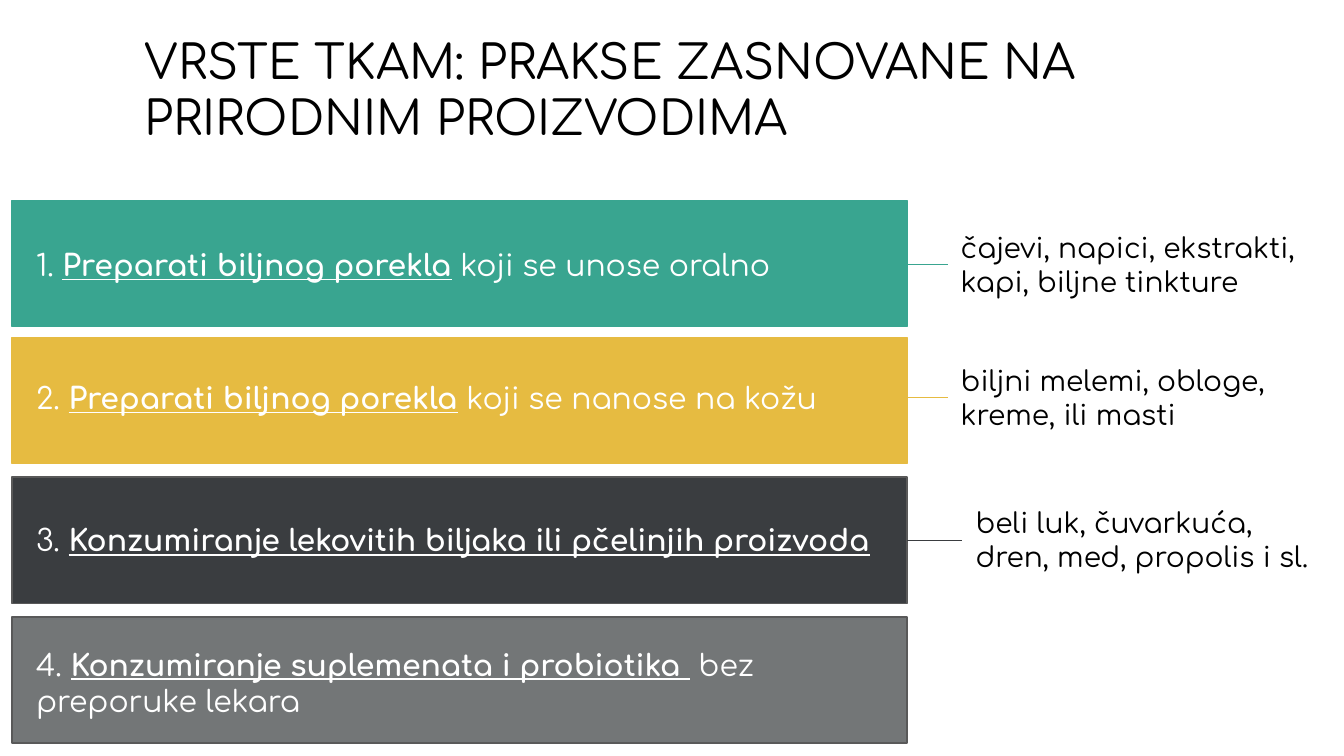
from lxml import etree
from pptx import Presentation, util as u
from pptx.dml.color import RGBColor
from pptx.enum import shapes as sh, text as tx
from pptx.oxml.ns import qn

WIDE = 10
HIGH = WIDE * 9 / 16
LEFT, BAR_W, BAR_H = 0.09, 6.66, 0.94
EDGE = LEFT + BAR_W
TEXT_X = 0.17

ROWS = [
    dict(top=1.49, fill="39A590", line="39A590", mid=1.97, label_h=0.47,
         lead="1. ", key="Preparati biljnog porekla", rest=" koji se unose oralno",
         note="čajevi, napici, ekstrakti, kapi, biljne tinkture", note_x=7.05),
    dict(top=2.51, fill="E6BB41", line="E6BB41", mid=2.96, label_h=0.47,
         lead="2. ", key="Preparati biljnog porekla", rest=" koji se nanose na kožu",
         note="biljni melemi, obloge, kreme, ili masti", note_x=7.05),
    dict(top=3.55, fill="3A3D40", line="595959", mid=4.02, label_h=0.47,
         lead="3. ", key="Konzumiranje lekovitih biljaka ili pčelinjih proizvoda", rest="",
         note="beli luk, čuvarkuća, dren, med, propolis i sl.", note_x=7.16),
    dict(top=4.59, fill="737677", line="595959", mid=5.08, label_h=0.74,
         lead="4. ", key="Konzumiranje suplemenata i probiotika ", rest=" bez preporuke lekara",
         note="", note_x=0),
]


def tint(code):
    """Turn a hex string into a colour."""
    return RGBColor.from_string(code)


def add_text(slide, runs, box, size, color="000000"):
    """Add a wrapped text box whose runs are (wording, is_key) pairs."""
    shape = slide.shapes.add_textbox(*map(u.Inches, box))
    frame = shape.text_frame
    frame.word_wrap = True
    frame.vertical_anchor = tx.MSO_ANCHOR.TOP
    for side in ("left", "right", "top", "bottom"):
        setattr(frame, f"margin_{side}", u.Inches(0.1))
    for words, key in runs:
        run = frame.paragraphs[0].add_run()
        run.text = words
        font = run.font
        font.name, font.size = "Comfortaa", u.Pt(size)
        font.bold = font.underline = key
        font.color.rgb = tint(color)
    return shape


def add_bar(slide, row):
    """Add the coloured bar of one row."""
    box = LEFT, row["top"], BAR_W, BAR_H
    bar = slide.shapes.add_shape(sh.MSO_SHAPE.RECTANGLE, *map(u.Inches, box))
    bar.shadow.inherit = False
    bar.fill.solid()
    bar.fill.fore_color.rgb = tint(row["fill"])
    bar.line.color.rgb = tint(row["line"])
    bar.line.width = u.Pt(0.75)


def add_link(slide, start, end, color):
    """Join the right side of one box to the left side of another."""
    link = slide.shapes.add_connector(sh.MSO_CONNECTOR.STRAIGHT, 0, 0, 0, 0)
    link.begin_connect(start, 3)
    link.end_connect(end, 1)
    link.line.color.rgb = tint(color)
    link.line.width = u.Pt(0.75)
    etree.SubElement(link._element.spPr, qn("a:effectLst"))


def add_row(slide, row):
    """Add a bar with its label, and its note when there is one."""
    add_bar(slide, row)
    parts = [(row["lead"], False), (row["key"], True), (row["rest"], False)]
    high = row["label_h"]
    label = add_text(slide, [part for part in parts if part[0]],
                     (TEXT_X, row["mid"] - high / 2, EDGE - TEXT_X, high), 16, "FFFFFF")
    if row["note"]:
        note = add_text(slide, [(row["note"], False)],
                        (row["note_x"], row["mid"] - 0.71 / 2, 2.75, 0.71), 15)
        add_link(slide, label, note, row["fill"])


def main():
    """Build the slide and save it."""
    deck = Presentation()
    deck.slide_width, deck.slide_height = u.Inches(WIDE), u.Inches(HIGH)
    slide = deck.slides.add_slide(deck.slide_layouts[6])
    add_text(slide, [("VRSTE TKAM: PRAKSE ZASNOVANE NA PRIRODNIM PROIZVODIMA", False)],
             (0.98, 0.14, 8.08, 0.63), 25.2)
    for row in ROWS:
        add_row(slide, row)
    deck.save("out.pptx")


if __name__ == "__main__":
    main()
